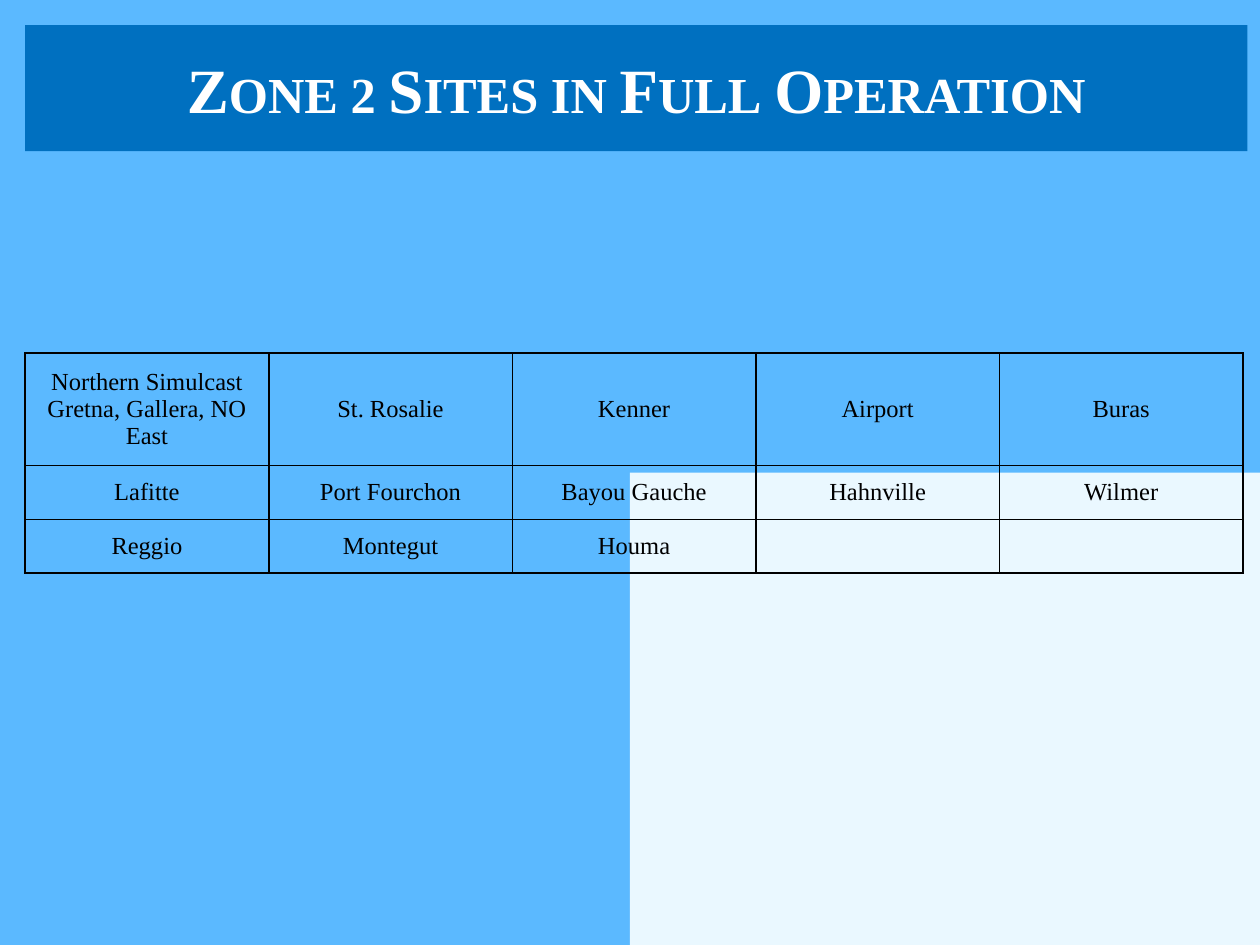
from lxml import etree
from pptx import Presentation
from pptx.dml.color import RGBColor
from pptx.enum.shapes import MSO_SHAPE
from pptx.enum.text import MSO_ANCHOR, PP_ALIGN
from pptx.oxml.ns import qn
from pptx.util import Pt

RECT = MSO_SHAPE.RECTANGLE
MIDDLE = MSO_ANCHOR.MIDDLE
CENTER = PP_ALIGN.CENTER
FONT = "Times New Roman"
SKY = RGBColor(0x5B, 0xB9, 0xFF)
PALE = RGBColor(0xEA, 0xF8, 0xFF)
BLUE = RGBColor(0x00, 0x70, 0xC0)
WHITE = RGBColor(0xFF, 0xFF, 0xFF)
BLACK = RGBColor(0x00, 0x00, 0x00)

SITES = [
    ["Northern Simulcast\nGretna, Gallera, NO East", "St. Rosalie", "Kenner", "Airport", "Buras"],
    ["Lafitte", "Port Fourchon", "Bayou Gauche", "Hahnville", "Wilmer"],
    ["Reggio", "Montegut", "Houma", "", ""],
]
ROW_HEIGHTS = [64.5, 30.75, 30.75]
COL_WIDTH = 139.2


def add_rect(left, top, width, height, color):
    sp = s.shapes.add_shape(RECT, Pt(left), Pt(top), Pt(width), Pt(height))
    sp.shadow.inherit = False
    sp.fill.solid()
    sp.fill.fore_color.rgb = color
    sp.line.fill.background()
    return sp


def add_run(p, text, size, color):
    p.alignment = CENTER
    r = p.add_run()
    r.text = text
    r.font.name = FONT
    r.font.size = Pt(size)
    r.font.color.rgb = color
    return r


prs = Presentation()
prs.slide_width, prs.slide_height = Pt(720), Pt(540)
s = prs.slides.add_slide(prs.slide_layouts[6])

# Background with a pale lower right quarter
s.background.fill.solid()
s.background.fill.fore_color.rgb = SKY
add_rect(360, 270, 360, 270, PALE)

# Table of sites
table = s.shapes.add_table(len(SITES), len(SITES[0]), Pt(14.4), Pt(201.6),
                           Pt(COL_WIDTH * len(SITES[0])), Pt(sum(ROW_HEIGHTS))).table
table.first_row = False
table.horz_banding = False
for col in table.columns:
    col.width = Pt(COL_WIDTH)
for i, names in enumerate(SITES):
    table.rows[i].height = Pt(ROW_HEIGHTS[i])
    for j, name in enumerate(names):
        cell = table.cell(i, j)
        cell.vertical_anchor = MIDDLE
        cell.fill.background()
        tf = cell.text_frame
        for k, line in enumerate(name.splitlines()):
            p = tf.add_paragraph() if k else tf.paragraphs[0]
            add_run(p, line, 14, BLACK)
        # Borders go before the fill in the cell properties
        tcPr = cell._tc.get_or_add_tcPr()
        for k, side in enumerate(("lnL", "lnR", "lnT", "lnB")):
            ln = etree.Element(qn("a:" + side), w=str(Pt(1)))
            fill = etree.SubElement(ln, qn("a:solidFill"))
            etree.SubElement(fill, qn("a:srgbClr"), val=str(BLACK))
            tcPr.insert(k, ln)

# Title bar in small capitals
tf = add_rect(14.4, 14.4, 698.4, 72, BLUE).text_frame
tf.word_wrap = True
tf.vertical_anchor = MIDDLE
r = add_run(tf.paragraphs[0], "Zone 2 Sites in Full Operation", 36, WHITE)
r.font.bold = True
r.font._element.set("cap", "small")

prs.save("out.pptx")
